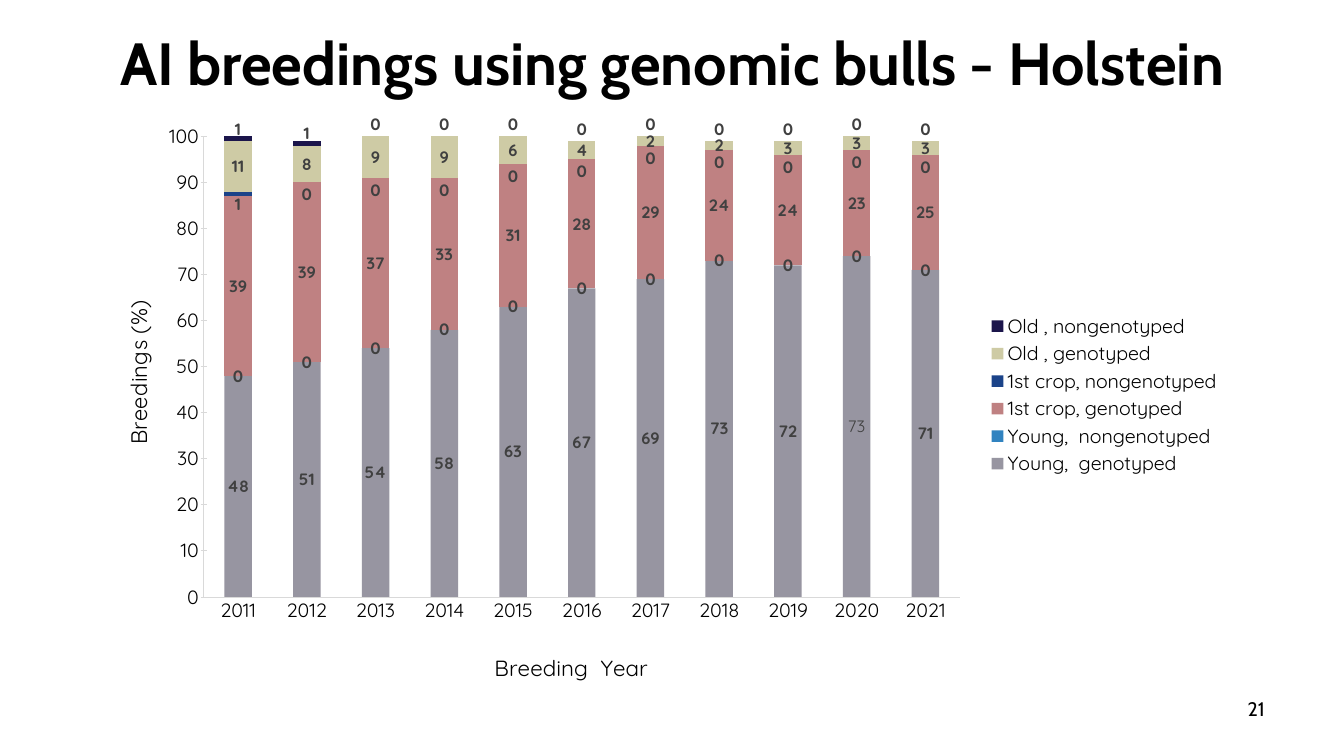
from dataclasses import dataclass

from lxml import etree
from pptx import Presentation
from pptx.chart.data import CategoryChartData
from pptx.dml.color import RGBColor
from pptx.enum.chart import (XL_CHART_TYPE, XL_LABEL_POSITION,
                             XL_LEGEND_POSITION, XL_TICK_MARK)
from pptx.enum.text import MSO_ANCHOR, PP_ALIGN
from pptx.oxml.ns import qn
from pptx.util import Pt

STACKED = XL_CHART_TYPE.COLUMN_STACKED
CENTER = XL_LABEL_POSITION.CENTER
INSIDE_END = XL_LABEL_POSITION.INSIDE_END
INSIDE_BASE = XL_LABEL_POSITION.INSIDE_BASE
LEGEND_RIGHT = XL_LEGEND_POSITION.RIGHT
TICK_NONE, TICK_CROSS = XL_TICK_MARK.NONE, XL_TICK_MARK.CROSS
BOTTOM, MIDDLE = MSO_ANCHOR.BOTTOM, MSO_ANCHOR.MIDDLE
ALIGN_CENTER, ALIGN_RIGHT = PP_ALIGN.CENTER, PP_ALIGN.RIGHT


@dataclass(frozen=True)
class Theme:
    """Colours, fonts and type sizes of the slide."""
    text: str = "000000"
    label: str = "404040"
    axis: str = "D9D9D9"
    heading_font: str = "Cabin"
    chart_font: str = "Quicksand"
    title_size: int = 85
    axis_title_size: int = 32
    body_size: int = 28
    label_size: int = 24


YEARS = [str(year) for year in range(2011, 2022)]
SERIES = [
    ("Young,  genotyped", [48, 51, 54, 58, 63, 67, 69, 73, 72, 74, 71],
     "0E0A26", CENTER),
    ("Young,  nongenotyped", [0] * 11, "3183C0", CENTER),
    ("1st crop, genotyped", [39, 39, 37, 33, 31, 28, 29, 24, 24, 23, 25],
     "BF8182", CENTER),
    ("1st crop, nongenotyped", [1] + [0] * 10, "1B4389", INSIDE_END),
    ("Old , genotyped", [11, 8, 9, 9, 6, 4, 2, 2, 3, 3, 3],
     "CECBA5", CENTER),
    ("Old , nongenotyped", [1, 1] + [0] * 9, "1B154B", INSIDE_BASE),
]


class SlideBuilder:
    """Draws text and charts on one slide in one theme."""

    def __init__(self, slide, theme):
        """Keep the slide and its theme."""
        self.s = slide
        self.theme = theme

    def style(self, font, size, color, name, bold=False):
        """Set the look of a font."""
        font.size, font.name, font.bold = Pt(size), name, bold
        font.color.rgb = RGBColor.from_string(color)

    def text(self, box, text, size, align, anchor, bold=False):
        """Add a one-line text box."""
        tf = self.s.shapes.add_textbox(*map(Pt, box)).text_frame
        tf.word_wrap = True
        tf.vertical_anchor = anchor
        tf.margin_left = tf.margin_right = Pt(17.28)
        tf.margin_top = tf.margin_bottom = Pt(8.64)
        p = tf.paragraphs[0]
        p.alignment = align
        r = p.add_run()
        r.text = text
        self.style(r.font, size, self.theme.text, self.theme.heading_font, bold)

    def place(self, element, index, inner=False, **fractions):
        """Give a chart part a fixed place, in fractions of the chart."""
        for old in element.findall(qn("c:layout")):
            element.remove(old)
        layout = etree.Element(qn("c:layout"))
        element.insert(index, layout)
        manual = etree.SubElement(layout, qn("c:manualLayout"))
        values = {"layoutTarget": "inner"} if inner else {}
        values.update(xMode="edge", yMode="edge", **fractions)
        for tag, value in values.items():
            etree.SubElement(manual, qn(f"c:{tag}")).set("val", str(value))

    def axis(self, axis, title, tick, x, y):
        """Style an axis and place its title."""
        t = self.theme
        axis.has_major_gridlines = False
        axis.major_tick_mark, axis.minor_tick_mark = tick, TICK_NONE
        axis.format.line.color.rgb = RGBColor.from_string(t.axis)
        axis.format.line.width = Pt(0.75)
        self.style(axis.tick_labels.font, t.body_size, t.text, t.chart_font)
        r = axis.axis_title.text_frame.paragraphs[0].add_run()
        r.text = title
        self.style(r.font, t.axis_title_size, t.text, t.chart_font)
        self.place(axis.axis_title._element, 1, x=x, y=y)

    def series(self, series, color, position):
        """Colour a series and show its values."""
        t = self.theme
        series.format.fill.solid()
        series.format.fill.fore_color.rgb = RGBColor.from_string(color)
        labels = series.data_labels
        labels.show_value = True
        labels.position = position
        self.style(labels.font, t.label_size, t.label, t.chart_font, True)

    def point_label(self, series, index, text):
        """Replace the label of one point by a text."""
        t = self.theme
        label = series.points[index].data_label
        r = label.text_frame.paragraphs[0].add_run()
        r.text = text
        self.style(r.font, t.label_size, t.label, t.chart_font)
        label.position = CENTER

    def fade(self, series, percent):
        """Make the fill of a series partly transparent."""
        color = series._element.find(f"{qn('c:spPr')}//{qn('a:srgbClr')}")
        etree.SubElement(color, qn("a:alpha")).set("val", str(percent * 1000))

    def stacked_chart(self, box, categories, rows):
        """Add a stacked column chart and return it."""
        t = self.theme
        data = CategoryChartData(number_format="#,##0")
        data.categories = categories
        for name, values, _, _ in rows:
            data.add_series(name, values)
        chart = self.s.shapes.add_chart(STACKED, *map(Pt, box), data).chart
        chart.has_title = False
        self.style(chart.font, 10, t.text, t.chart_font)
        plot = chart.plots[0]
        plot.gap_width, plot.overlap = 150, 100
        for series, (_, _, color, position) in zip(plot.series, rows):
            self.series(series, color, position)
        chart.has_legend = True
        legend = chart.legend
        legend.position = LEGEND_RIGHT
        legend.include_in_layout = False
        self.style(legend.font, t.body_size, t.text, t.chart_font)
        return chart


def main():
    """Build the slide and save it."""
    prs = Presentation()
    prs.slide_width, prs.slide_height = Pt(1918.8), Pt(1080)
    theme = Theme()
    s = SlideBuilder(prs.slides.add_slide(prs.slide_layouts[6]), theme)

    s.text((104.4, 20.16, 1709.28, 128.16),
           "AI breedings using genomic bulls - Holstein",
           theme.title_size, ALIGN_CENTER, BOTTOM, bold=True)
    s.text((1375.2, 983.52, 447.84, 57.6), "21",
           theme.body_size, ALIGN_RIGHT, MIDDLE)

    chart = s.stacked_chart((136.08, 162, 1611.36, 822.24), YEARS, SERIES)
    s.axis(chart.category_axis, "Breeding  Year", TICK_NONE, 0.35, 0.95)
    values = chart.value_axis
    s.axis(values, "Breedings (%)", TICK_CROSS, 0.02, 0.33)
    values.minimum_scale, values.maximum_scale = 0, 100
    values.major_unit = 10
    values.tick_labels.number_format = "#,##0"
    values.tick_labels.number_format_is_linked = False
    young = chart.plots[0].series[0]
    s.fade(young, 43)
    s.point_label(young, YEARS.index("2020"), "73")
    plot_area = chart._chartSpace.chart.plotArea
    s.place(plot_area, 0, inner=True, x=0.096, y=0.041, w=0.67, h=0.818)
    s.place(chart.legend._element, 1, x=0.79, y=0.35, w=0.21, h=0.3)

    prs.save("out.pptx")


if __name__ == "__main__":
    main()
